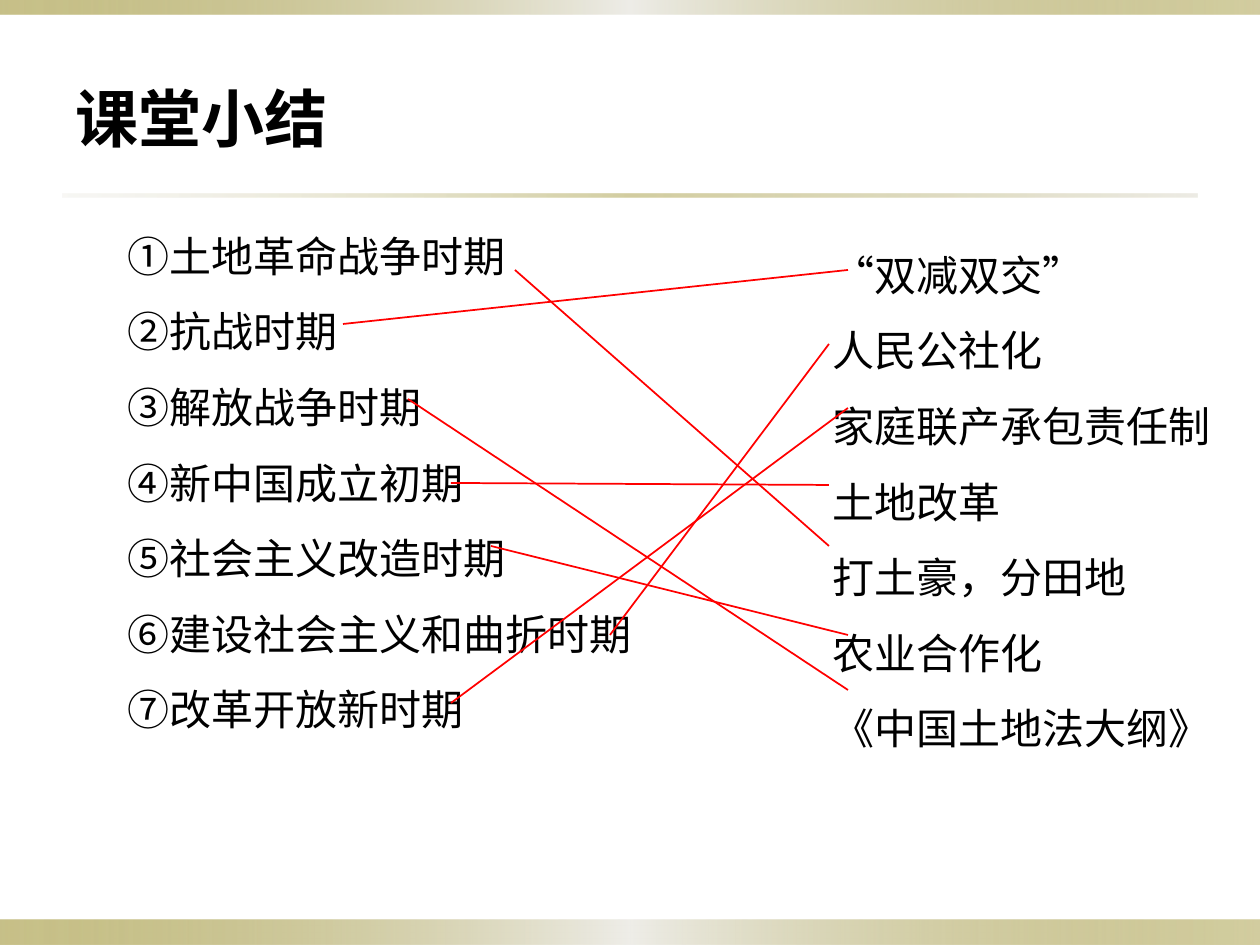
from lxml.etree import SubElement as Sub
from pptx import Presentation
from pptx.dml.color import RGBColor
from pptx.enum.shapes import MSO_CONNECTOR as Conn, MSO_SHAPE as Geo
from pptx.enum.text import MSO_ANCHOR as Anchor
from pptx.oxml.ns import qn
from pptx.util import Pt

PX = 914400 / 126
FONT = "Noto Sans CJK SC"
BAND = [(0, "918415", 50), (50, "EEEDE8", 100), (100, "918415", 40)]
RULE = [(0, "DCD9CC", 20), (50, "918415", 40), (100, "DCD9CC", 50)]
ERAS = ["①土地革命战争时期", "②抗战时期", "③解放战争时期", "④新中国成立初期",
        "⑤社会主义改造时期", "⑥建设社会主义和曲折时期", "⑦改革开放新时期"]
TERMS = ["“双减双交”", "人民公社化", "家庭联产承包责任制", "土地改革",
         "打土豪，分田地", "农业合作化", "《中国土地法大纲》"]
LINKS = [(515, 270, 829, 546), (343, 324, 848, 270), (408, 399, 848, 690),
         (451, 483, 829, 485), (491, 546, 848, 635), (610, 635, 829, 344),
         (451, 703, 848, 408)]


def emu(*vals):
    """Turn px lengths into EMU."""
    return [round(v * PX) for v in vals]


def rgb(code):
    """Turn a hex string into a colour."""
    return RGBColor.from_string(code)


def bar(slide, box, stops):
    """Draw a flat bar with a horizontal gradient."""
    shape = slide.shapes.add_shape(Geo.RECTANGLE, *emu(*box))
    shape.shadow.inherit = False
    shape.line.fill.background()
    shape.fill.gradient()
    shape.fill.gradient_angle = 0
    gs_list = shape.fill._fill._gradFill.find(qn("a:gsLst"))
    for old in list(gs_list):
        gs_list.remove(old)
    for pos, code, alpha in stops:
        stop = Sub(gs_list, qn("a:gs"), pos=str(pos * 1000))
        tint = Sub(stop, qn("a:srgbClr"), val=code)
        if alpha < 100:
            Sub(tint, qn("a:alpha"), val=str(alpha * 1000))


def text(slide, box, lines, size=24, bold=False, anchor=Anchor.TOP, top=6, lead=None):
    """Place lines of text, one paragraph each."""
    frame = slide.shapes.add_textbox(*emu(*box)).text_frame
    frame.word_wrap = True
    frame.vertical_anchor = anchor
    frame.margin_top = emu(top)[0]
    for i, line in enumerate(lines):
        para = frame.add_paragraph() if i else frame.paragraphs[0]
        if lead:
            para.line_spacing = Pt(lead)
        run = para.add_run()
        run.text = line
        font = run.font
        font.name, font.size, font.bold = FONT, Pt(size), bold
        font.color.rgb = rgb("000000")
        Sub(font._element, qn("a:ea"), typeface=FONT)


def link(slide, ends):
    """Draw a thin red line between two points."""
    line = slide.shapes.add_connector(Conn.STRAIGHT, *emu(*ends))
    line.line.color.rgb = rgb("FF0000")
    line.line.width = Pt(1)
    Sub(line._element.spPr, qn("a:effectLst"))


def frame(slide, x, y, w, h):
    """Draw the edge bands and the rule under the title."""
    bar(slide, (x, y + h - 25, w, 25), BAND)
    bar(slide, (x, y, w, 15), BAND)
    bar(slide, (x + 63, y + 194, w - 126, 3), RULE)


def match(slide, x, y, w, h):
    """Place the two lists and join the pairs."""
    text(slide, (x, y, 544, h), ERAS, top=10, lead=43.2)
    text(slide, (x + w - 427, y + 19, 427, h - 65), TERMS, top=10, lead=43.2)
    for x1, y1, x2, y2 in LINKS:
        link(slide, (x + x1 - 115, y + y1 - 195, x + x2 - 115, y + y2 - 195))


def main():
    """Build and save the slide."""
    deck = Presentation()
    deck.slide_width, deck.slide_height = emu(1260, 945)
    slide = deck.slides.add_slide(deck.slide_layouts[6])
    frame(slide, 0, 0, 1260, 945)
    text(slide, (63, 38, 1134, 158), ["课堂小结"], size=36, bold=True, anchor=Anchor.MIDDLE)
    match(slide, 115, 195, 1132, 689)
    deck.save("out.pptx")


if __name__ == "__main__":
    main()
